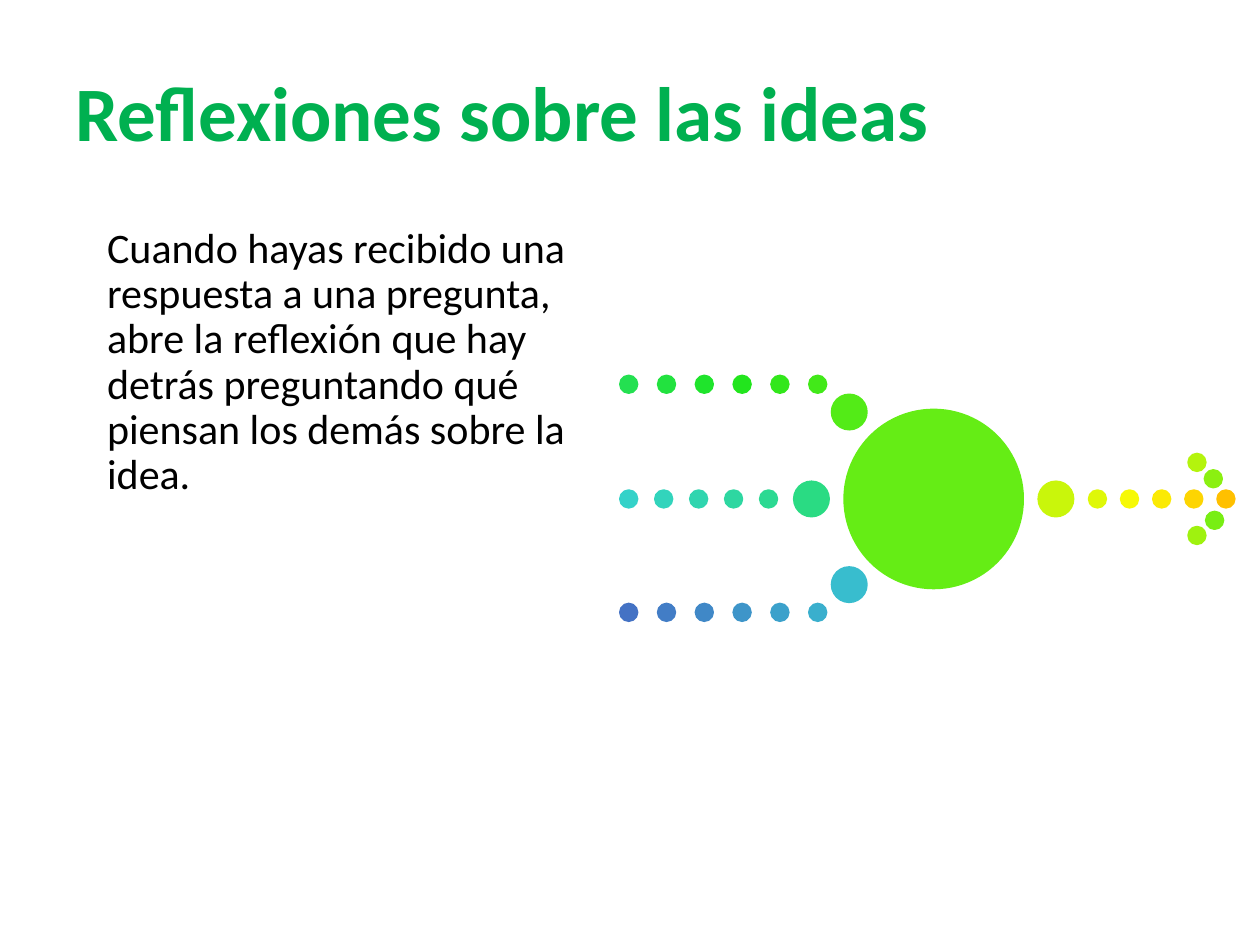
from pptx import Presentation
from pptx.dml.color import RGBColor
from pptx.enum.shapes import MSO_SHAPE
from pptx.enum.text import MSO_ANCHOR
from pptx.util import Inches, Pt

OVAL = MSO_SHAPE.OVAL
TOP = MSO_ANCHOR.TOP
MIDDLE = MSO_ANCHOR.MIDDLE

HUES = {
    "title": "00B050",
    "body": "000000",
    "out": "FFC000 FDD502 FBEA04 F6F906 DFF808",
    "exit": "C9F60B",
    "tip": "B4F40D 9FF20F 8BF011 78EE13",
    "core": "65ED15",
    "top": "42E919 32E71B 22E51D 1FE42C 22E23F 24E051",
    "mid": "2CD992 2ED7A1 30D5AF 32D4BC 34D2C9",
    "low": "3AAFCD 3CA1CB 3E95C9 4088C7 427DC6 4472C4",
    "top end": "53EB17",
    "mid end": "2ADB83",
    "low end": "38BDCE",
}
DOT, BALL, CORE = 0.14, 0.28, 1.42

deck = Presentation()
deck.slide_width = Inches(10)
deck.slide_height = Inches(7.5)
slide = deck.slides.add_slide(deck.slide_layouts[6])


def add_text(words, x, y, w, h, size, hue, anchor):
    box = slide.shapes.add_textbox(Inches(x), Inches(y), Inches(w), Inches(h))
    frame = box.text_frame
    frame.word_wrap = True
    frame.vertical_anchor = anchor
    para = frame.paragraphs[0]
    para.text = words
    para.line_spacing = 0.9
    para.font.name = "Calibri"
    para.font.size = Pt(size)
    para.font.color.rgb = RGBColor.from_string(hue)
    return frame


def add_dot(x, y, size, hue):
    dot = slide.shapes.add_shape(OVAL, Inches(x), Inches(y), Inches(size), Inches(size))
    dot.shadow.inherit = False
    dot.fill.solid()
    dot.fill.fore_color.rgb = RGBColor.from_string(hue)
    dot.line.color.rgb = RGBColor.from_string(hue)
    dot.line.width = Pt(1)


title = add_text("Reflexiones sobre las ideas", 0.5, 0.3, 9, 1.25, 44, HUES["title"], MIDDLE)
title.paragraphs[0].font.bold = True

body = add_text(
    "Cuando hayas recibido una respuesta a una pregunta, abre la reflexión que hay "
    "detrás preguntando qué piensan los demás sobre la idea.",
    0.5, 1.75, 4.42, 4.95, 24, HUES["body"], TOP)
body.margin_left = Inches(0.35)
body.paragraphs[0].space_before = Pt(10)

rows = [
    ("out", 9.66, 8.64, 3.89),
    ("top", 6.42, 4.92, 2.98),
    ("mid", 6.03, 4.92, 3.89),
    ("low", 6.42, 4.92, 4.79),
]
for name, start, end, y in rows:
    hues = HUES[name].split()
    step = (end - start) / (len(hues) - 1)
    for i, hue in enumerate(hues):
        add_dot(start + i * step, y, DOT, hue)

tips = [(9.43, 3.6), (9.43, 4.18), (9.56, 3.73), (9.57, 4.06)]
for (x, y), hue in zip(tips, HUES["tip"].split()):
    add_dot(x, y, DOT, hue)

balls = [
    ("exit", 8.24, 3.82, BALL),
    ("core", 6.7, 3.25, CORE),
    ("top end", 6.6, 3.13, BALL),
    ("mid end", 6.3, 3.82, BALL),
    ("low end", 6.6, 4.5, BALL),
]
for name, x, y, size in balls:
    add_dot(x, y, size, HUES[name])

deck.save("out.pptx")
